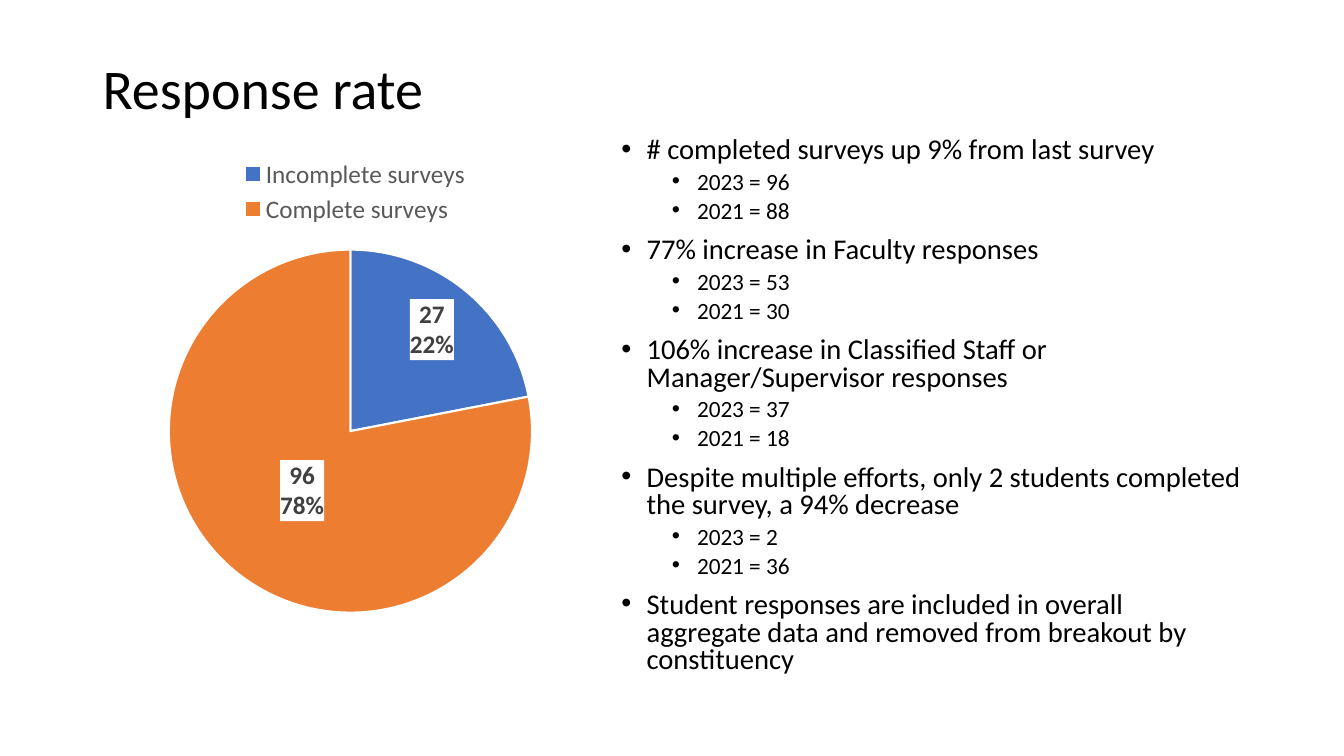
from dataclasses import dataclass

from lxml import etree
from pptx import Presentation
from pptx import util as u
from pptx.chart import data as chart_data
from pptx.dml import color
from pptx.enum import chart as charts
from pptx.enum import text
from pptx.oxml import ns, parse_xml


@dataclass(frozen=True)
class Theme:
    font: str = "Calibri"
    ink: str = "000000"
    paper: str = "FFFFFF"
    legend_ink: str = "595959"
    label_ink: str = "404040"
    slices: tuple = ("4472C4", "ED7D31")
    title_size: float = 40
    bullet_sizes: tuple = (20.4, 16.6)
    bullet_gaps: tuple = (10, 5)
    bullet_indents: tuple = (0.25, 0.75)
    hanging: float = 0.25
    chart_size: float = 18


def format_font(font, *, name, size, ink, bold=False):
    font.name, font.size, font.bold = name, u.Pt(size), bold
    font.color.rgb = color.RGBColor.from_string(ink)


def add_text(para, content, *, spacing, before=0, **style):
    para.line_spacing = spacing
    para.space_before = u.Pt(before)
    span = para.add_run()
    span.text = content
    format_font(span.font, **style)


def layout_xml(**shares):
    values = "".join(f'<c:{key} val="{share}"/>' for key, share in shares.items())
    return f'<c:layout {ns.nsdecls("c")}><c:manualLayout>{values}</c:manualLayout></c:layout>'


class SlideBuilder:
    """Build slide elements from a theme and shares of the slide size."""

    def __init__(self, deck, theme):
        self.deck, self.theme = deck, theme
        self.page = deck.slides.add_slide(deck.slide_layouts[6])

    def place(self, left, top, width, height):
        across, down = self.deck.slide_width, self.deck.slide_height
        return int(left * across), int(top * down), int(width * across), int(height * down)

    def text_frame(self, area, anchor):
        frame = self.page.shapes.add_textbox(*self.place(*area)).text_frame
        frame.word_wrap = True
        frame.vertical_anchor = anchor
        return frame

    def title(self, content, area):
        frame = self.text_frame(area, text.MSO_ANCHOR.MIDDLE)
        add_text(frame.paragraphs[0], content, spacing=0.9, name=self.theme.font,
                 size=self.theme.title_size, ink=self.theme.ink)

    def bullets(self, groups, area):
        frame = self.text_frame(area, text.MSO_ANCHOR.TOP)
        lines = [(level, line) for heading, details in groups
                 for level, line in [(0, heading), *((1, detail) for detail in details)]]
        for index, (level, line) in enumerate(lines):
            para = frame.add_paragraph() if index else frame.paragraphs[0]
            para.level = level
            add_text(para, line, spacing=0.8, before=self.theme.bullet_gaps[level],
                     name=self.theme.font, size=self.theme.bullet_sizes[level],
                     ink=self.theme.ink)
            props = para._p.get_or_add_pPr()
            props.set("marL", str(u.Inches(self.theme.bullet_indents[level])))
            props.set("indent", str(-u.Inches(self.theme.hanging)))
            etree.SubElement(props, ns.qn("a:buFont"), typeface="Arial")
            etree.SubElement(props, ns.qn("a:buChar"), char="•")

    def pie(self, values, label_shifts, area):
        theme = self.theme
        numbers = chart_data.CategoryChartData()
        numbers.categories = list(values)
        numbers.add_series("Series 1", list(values.values()))
        chart = self.page.shapes.add_chart(
            charts.XL_CHART_TYPE.PIE, *self.place(*area), numbers).chart
        format_font(chart.font, name=theme.font, size=theme.chart_size, ink=theme.ink)
        chart.has_title = False
        chart.has_legend = True
        legend = chart.legend
        legend.position = charts.XL_LEGEND_POSITION.TOP
        legend.include_in_layout = False
        format_font(legend.font, name=theme.font, size=theme.chart_size, ink=theme.legend_ink)
        legend._element.find(ns.qn("c:legendPos")).addnext(parse_xml(layout_xml(
            xMode="edge", yMode="edge", x=0.26, y=0.02, w=0.49, h=0.14)))
        plot_area = chart._chartSpace.chart.plotArea
        for old in plot_area.findall(ns.qn("c:layout")):
            plot_area.remove(old)
        plot_area.insert(0, parse_xml(layout_xml(
            layoutTarget="inner", xMode="edge", yMode="edge", x=0.11, y=0.2, w=0.77, h=0.69)))

        plot = chart.plots[0]
        plot.vary_by_categories = True
        series = plot.series[0]
        for index, fill in enumerate(theme.slices):
            look = series.points[index].format
            look.fill.solid()
            look.fill.fore_color.rgb = color.RGBColor.from_string(fill)
            look.line.color.rgb = color.RGBColor.from_string(theme.paper)
            look.line.width = u.Pt(1.5)
        labels = series.data_labels
        labels.show_value = labels.show_percentage = True
        format_font(labels.font, name=theme.font, size=theme.chart_size,
                    ink=theme.label_ink, bold=True)
        for index, (x, y) in enumerate(label_shifts):
            labels._element.insert(index, self.pie_label(index, x, y))

    def pie_label(self, index, x, y):
        theme = self.theme
        shown = {"LegendKey": 0, "Val": 1, "CatName": 0, "SerName": 0,
                 "Percent": 1, "BubbleSize": 0}
        flags = "".join(f'<c:show{key} val="{flag}"/>' for key, flag in shown.items())
        return parse_xml(
            f'<c:dLbl {ns.nsdecls("c", "a")}><c:idx val="{index}"/>{layout_xml(x=x, y=y)}'
            f'<c:spPr><a:solidFill><a:srgbClr val="{theme.paper}"/></a:solidFill></c:spPr>'
            f'<c:txPr><a:bodyPr/><a:p><a:pPr><a:defRPr sz="{theme.chart_size * 100}" b="1">'
            f'<a:solidFill><a:srgbClr val="{theme.label_ink}"/></a:solidFill>'
            f'<a:latin typeface="{theme.font}"/></a:defRPr></a:pPr></a:p></c:txPr>'
            f'<c:dLblPos val="ctr"/>{flags}<c:separator>\n</c:separator></c:dLbl>')


def main():
    deck = Presentation()
    deck.slide_width, deck.slide_height = u.Inches(13.33), u.Inches(7.5)
    slide = SlideBuilder(deck, Theme())
    slide.title("Response rate", (0.069, 0.053, 0.863, 0.137))
    slide.bullets([
        ("# completed surveys up 9% from last survey", ["2023 = 96", "2021 = 88"]),
        ("77% increase in Faculty responses", ["2023 = 53", "2021 = 30"]),
        ("106% increase in Classified Staff or Manager/Supervisor responses",
         ["2023 = 37", "2021 = 18"]),
        ("Despite multiple efforts, only 2 students completed the survey, a 94% decrease",
         ["2023 = 2", "2021 = 36"]),
        ("Student responses are included in overall aggregate data and removed "
         "from breakout by constituency", []),
    ], (0.455, 0.176, 0.477, 0.724))
    slide.pie({"Incomplete surveys": 27, "Complete surveys": 96},
              [(0.05, -0.06), (0.02, -0.02)], (0.086, 0.191, 0.353, 0.696))
    deck.save("out.pptx")


if __name__ == "__main__":
    main()
